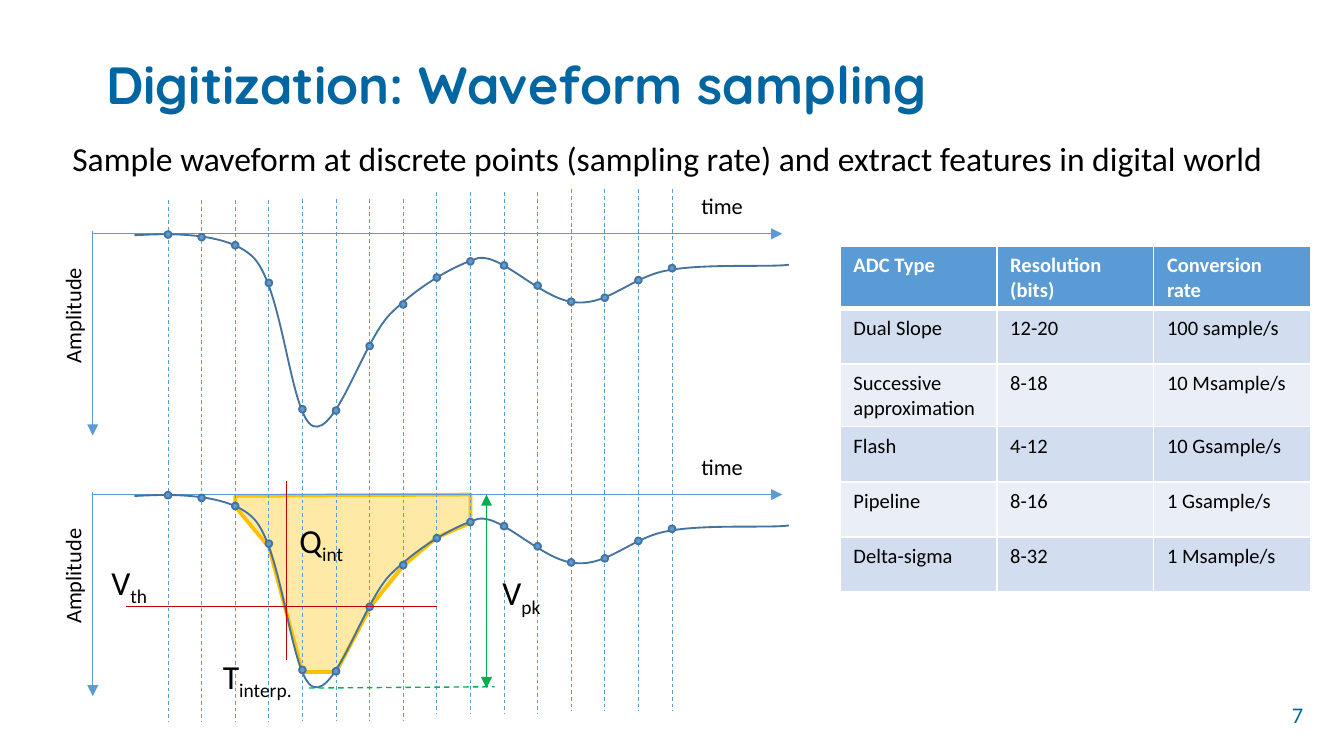
"""Build a slide on waveform sampling with two plots and a table of converters."""
from lxml.etree import SubElement
from pptx import Presentation
from pptx.dml.color import RGBColor
from pptx.enum.dml import MSO_LINE
from pptx.enum.shapes import MSO_CONNECTOR, MSO_SHAPE
from pptx.enum.text import MSO_ANCHOR, MSO_AUTO_SIZE, PP_ALIGN
from pptx.oxml.ns import qn
from pptx.util import Cm, Pt

TITLE = "Digitization: Waveform sampling"
LEAD = "Sample waveform at discrete points (sampling rate) and extract features in digital world"
ROWS = [
    ("ADC Type", "Resolution (bits)", "Conversion rate"),
    ("Dual Slope", "12-20", "100 sample/s"),
    ("Successive approximation", "8-18", "10 Msample/s"),
    ("Flash", "4-12", "10 Gsample/s"),
    ("Pipeline", "8-16", "1 Gsample/s"),
    ("Delta-sigma", "8-32", "1 Msample/s"),
]
LABELS = [
    ("V", "th", 0.73, 4.13, 0.49),
    ("T", "interp.", 1.56, 4.83, 0.78),
    ("V", "pk", 3.64, 4.21, 0.5),
    ("Q", "int", 2.13, 3.82, 0.55),
]
START = (1, 1.75)
CURVE = [
    ((1.09, 1.75), (1.67, 1.69), (1.89, 1.92)),
    ((2.11, 2.16), (2.16, 3.1), (2.33, 3.17)),
    ((2.5, 3.24), (2.7, 2.55), (2.9, 2.34)),
    ((3.11, 2.13), (3.37, 1.98), (3.56, 1.92)),
    ((3.74, 1.89), (4.04, 2.24), (4.29, 2.25)),
    ((4.53, 2.27), (4.71, 2.05), (4.98, 2.01)),
    ((5.24, 1.96), (5.74, 1.99), (5.87, 1.97)),
]
AREA = [(1.75, 3.69), (1.75, 3.77), (2, 4.07), (2.25, 5), (2.5, 5),
        (2.76, 4.51), (3, 4.21), (3.25, 4), (3.5, 3.89), (3.5, 3.68)]
DOTS = [1.72, 1.74, 1.8, 2.08, 3.02, 3.03, 2.55, 2.24,
        2.04, 1.92, 1.95, 2.1, 2.22, 2.19, 2.06, 1.97]
TOPS = [1.49, 1.48, 1.43, 1.41]
FIRST, STEP, DOT, DROP = 1.25, 0.25, 0.05, 1.94
BLUE, EDGE, GREEN, RED, GOLD = "5B9BD5", "43739E", "00B050", "C00000", "FFC000"
NAVY, BLACK, WHITE = "0066A1", "000000", "FFFFFF"
BANDS = ["EAEFF7", "D2DEEF"]


def inch(num):
    return Cm(num * 2.54)


def paint(part, color):
    if hasattr(part, "solid"):
        part.solid()
        part.fore_color.rgb = RGBColor.from_string(color)
    else:
        part.rgb = RGBColor.from_string(color)


def write(para, text, size, color=BLACK, face="Calibri", bold=False, sub=False):
    run = para.add_run()
    run.text = text
    run.font.size, run.font.name, run.font.bold = Pt(size), face, bold
    paint(run.font.color, color)
    if sub:
        run.font._element.set("baseline", "-25000")


def label(board, box, text, size, color=BLACK, sub="", turn=0):
    shape = board.add_textbox(*map(inch, box))
    shape.rotation = turn
    shape.text_frame.word_wrap = False
    para = shape.text_frame.paragraphs[0]
    write(para, text, size, color)
    if sub:
        write(para, sub, size, color, sub=True)
    return shape


def line(board, ends, color=BLUE, width=0.5, dash=False, heads=()):
    wire = board.add_connector(MSO_CONNECTOR.STRAIGHT, *map(inch, ends))
    paint(wire.line.fill, color)
    wire.line.width = Pt(width)
    if dash:
        wire.line.dash_style = MSO_LINE.DASH
    for head in heads:
        SubElement(wire.line._get_or_add_ln(), qn(f"a:{head}"), type="triangle")
    SubElement(wire._element.spPr, qn("a:effectLst"))


def outline(board, points, color, width, close):
    spots = [(inch(x), inch(y)) for x, y in points]
    pen = board.build_freeform(*spots[0])
    pen.add_line_segments(spots[1:], close=close)
    shape = pen.convert_to_shape()
    shape.shadow.inherit = False
    paint(shape.line.fill, color)
    shape.line.width = Pt(width)
    return shape


def wave(board, down):
    ends = [START] + [part[2] for part in CURVE]
    shape = outline(board, [(x, y + down) for x, y in ends], EDGE, 1, False)
    shape.fill.background()
    legs = list(shape._element.iter(qn("a:lnTo")))
    for leg, part in zip(legs, CURVE):
        leg.tag = qn("a:cubicBezTo")
        for spot, (x, y) in enumerate(part[:2]):
            knob = SubElement(leg, qn("a:pt"), x=str(inch(x) - shape.left),
                              y=str(inch(y + down) - shape.top))
            leg.insert(spot, knob)


def plot(board, down):
    line(board, (0.69, 1.74 + down, 5.82, 1.74 + down), heads=["tailEnd"])
    label(board, (5.12, 1.38 + down, 0.52, 0.3), "time", 12)
    wave(board, down)
    for spot in range(len(DOTS)):
        x, top = FIRST + spot * STEP, TOPS[spot // 4] + down
        line(board, (x, top, x, top + DROP), dash=True)
    for spot, y in enumerate(DOTS):
        x = FIRST + spot * STEP - DOT / 2
        dot = board.add_shape(MSO_SHAPE.OVAL, *map(inch, (x, y + down, DOT, DOT)))
        dot.shadow.inherit = False
        paint(dot.fill, BLUE)
        paint(dot.line.fill, EDGE)
        dot.line.width = Pt(1)
    line(board, (0.69, 1.72 + down, 0.69, 3.24 + down), heads=["tailEnd"])


def border(cell, side, width):
    edge = SubElement(cell._tc.get_or_add_tcPr(), qn(f"a:ln{side}"), w=str(Pt(width)))
    fill = SubElement(edge, qn("a:solidFill"))
    SubElement(fill, qn("a:srgbClr"), val=WHITE)


def grid(board):
    frame = board.add_table(len(ROWS), 3, *map(inch, (6.25, 1.83, 3.5, 2.46)))
    for row, texts in enumerate(ROWS):
        for col, text in enumerate(texts):
            cell = frame.table.cell(row, col)
            for side in "LRTB":
                thick = (row, side) in [(0, "B"), (1, "T")]
                border(cell, side, 3 if thick else 1)
            paint(cell.fill, BANDS[row % 2] if row else BLUE)
            write(cell.text_frame.paragraphs[0], text, 11,
                  BLACK if row else WHITE, bold=not row)


def main():
    deck = Presentation()
    deck.slide_width, deck.slide_height = Pt(720), Pt(405)
    page = deck.slides.add_slide(deck.slide_layouts[5]).shapes

    head = page.title
    head.left, head.top, head.width, head.height = map(inch, (0.69, 0.35, 8.62, 0.56))
    frame = head.text_frame
    frame.auto_size, frame.vertical_anchor = MSO_AUTO_SIZE.NONE, MSO_ANCHOR.BOTTOM
    para = frame.paragraphs[0]
    para.alignment, para.line_spacing = PP_ALIGN.LEFT, 0.9
    write(para, TITLE, 28, NAVY, "Quicksand", True)

    area = outline(page, AREA, GOLD, 2, True)
    paint(area.fill, GOLD)
    tint = area._element.spPr.find(qn("a:solidFill"))[0]
    SubElement(tint, qn("a:alpha"), val="35000")

    plot(page.add_group_shape().shapes, 0)
    plot(page, DROP)
    for down in (0, DROP):
        label(page, (0.08, 2.19 + down, 0.92, 0.3), "Amplitude", 12, turn=270)
    for text, sub, x, y, wide in LABELS:
        label(page, (x, y, wide, 0.4), text, 18, sub=sub)
    line(page, (3.62, 5.12, 3.62, 3.68), GREEN, heads=["headEnd", "tailEnd"])
    line(page, (2.3, 5.12, 3.68, 5.11), GREEN, 0.75, True)
    line(page, (2.13, 3.58, 2.13, 4.91), RED)
    line(page, (0.94, 4.51, 3.25, 4.51), RED)

    grid(page)
    label(page, (0.44, 0.98, 9.13, 0.4), LEAD, 18)
    mark = label(page, (9.39, 5.17, 0.53, 0.3), "7", 12, NAVY)
    mark.text_frame.word_wrap = True
    mark.text_frame.vertical_anchor = MSO_ANCHOR.MIDDLE
    mark.text_frame.paragraphs[0].alignment = PP_ALIGN.CENTER
    deck.save("out.pptx")


if __name__ == "__main__":
    main()
